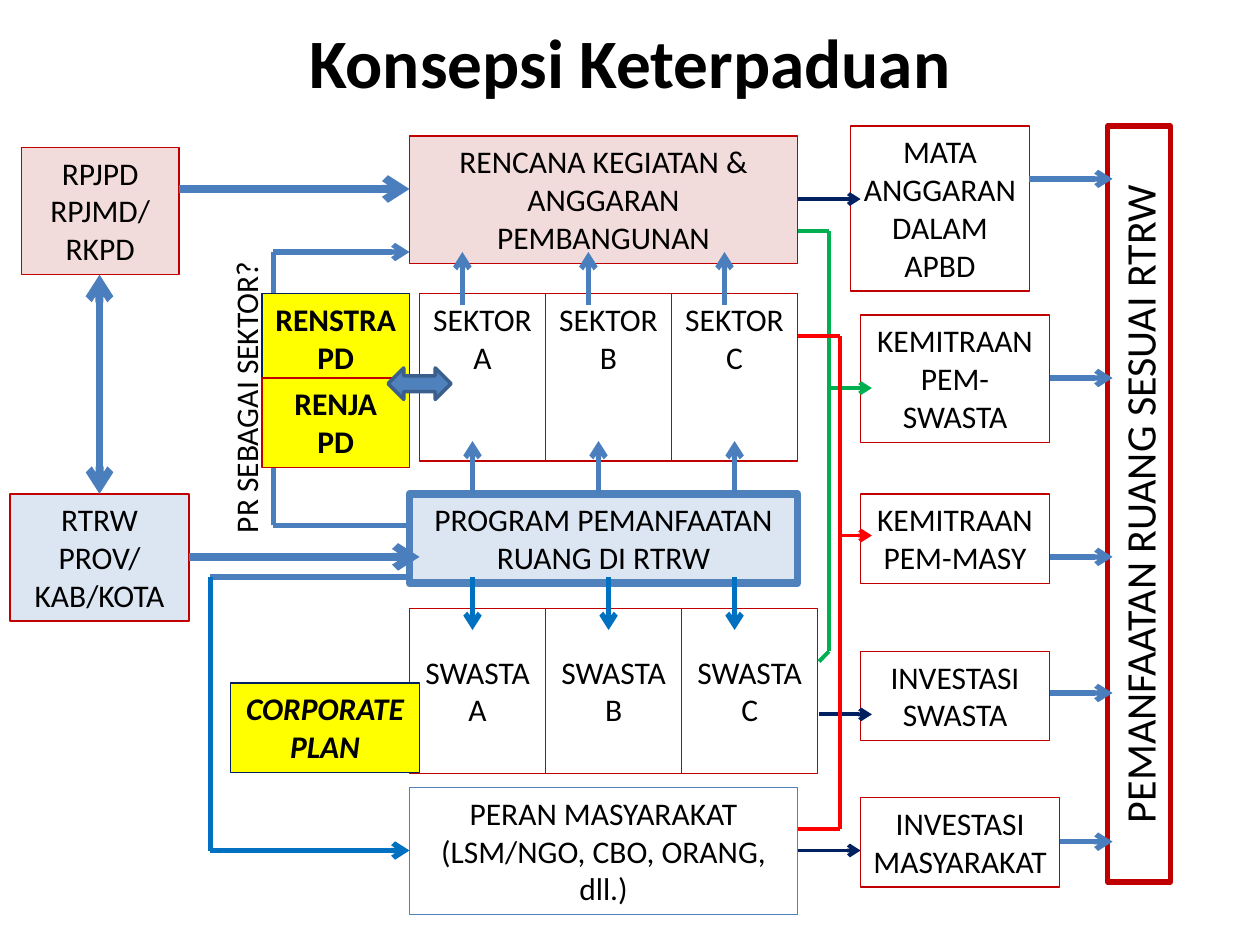
from itertools import pairwise

from lxml.etree import SubElement
from pptx import Presentation
from pptx.dml.color import RGBColor
from pptx.enum.shapes import MSO_CONNECTOR, MSO_SHAPE
from pptx.enum.text import MSO_ANCHOR, PP_ALIGN
from pptx.oxml.ns import qn
from pptx.util import Inches, Pt

COLORS = {
    "black": "000000", "blue": "4F81BD", "line": "4B7EBC", "edge": "3A5F8C",
    "sky": "DCE6F2", "pink": "F2DCDB", "yellow": "FFFF00", "maroon": "C00000",
    "navy": "002060", "azure": "0070C0", "green": "00B050", "red": "FF0000",
}
TWO, THREE, FOUR = 0.71, 1.01, 1.31  # box heights by number of text lines


def color(name):
    return RGBColor.from_string(COLORS[name])


def write(shape, text, size=18, bold=None, italic=None, align=PP_ALIGN.CENTER,
          anchor=MSO_ANCHOR.TOP, top=0.05):
    frame = shape.text_frame
    frame.word_wrap = True
    frame.vertical_anchor = anchor
    frame.margin_top = Inches(top)
    frame.text = text
    for par in frame.paragraphs:
        par.alignment = align
        font = par.font
        font.name, font.size = "Calibri", Pt(size)
        font.bold, font.italic = bold, italic
        font.color.rgb = color("black")


def label(slide, area, text, turn=0, **style):
    box = slide.shapes.add_textbox(*map(Inches, area))
    box.rotation = turn
    write(box, text, **style)


def block(slide, area, text="", fill=None, edge="maroon", width=0.75, turn=0,
          kind=MSO_SHAPE.RECTANGLE, **style):
    shape = slide.shapes.add_shape(kind, *map(Inches, area))
    shape.shadow.inherit = False
    shape.rotation = turn
    if fill:
        shape.fill.solid()
        shape.fill.fore_color.rgb = color(fill)
    else:
        shape.fill.background()
    shape.line.color.rgb = color(edge)
    shape.line.width = Pt(width)
    if text:
        write(shape, text, **style)


def route(slide, points, tint="line", width=3, head=False, tail=True):
    """Join the points with lines; the tail arrow sits at the last point."""
    legs = list(pairwise(points))
    for i, (start, end) in enumerate(legs):
        link = slide.shapes.add_connector(
            MSO_CONNECTOR.STRAIGHT, *map(Inches, start + end))
        link.line.color.rgb = color(tint)
        link.line.width = Pt(width)
        props = link.line._get_or_add_ln()
        if head and i == 0:
            SubElement(props, qn("a:headEnd"), type="arrow")
        if tail and i == len(legs) - 1:
            SubElement(props, qn("a:tailEnd"), type="arrow")
        SubElement(link._element.spPr, qn("a:effectLst"))


def plans(slide):
    # Loop from the programme to the budget, behind the yellow boxes
    route(slide, [(3.25, 4.17), (2.17, 4.17), (2.17, 2), (3.25, 2)])
    label(slide, (0.7, 2.88, 2.5, 0.4), "PR SEBAGAI SEKTOR?", turn=270,
          align=PP_ALIGN.LEFT)

    # Planning documents on the left
    block(slide, (0.17, 1.17, 1.25, THREE), "RPJPD RPJMD/\nRKPD", "pink")
    block(slide, (0.08, 3.92, 1.42, THREE), "RTRW PROV/\nKAB/KOTA", "sky")


def center(slide):
    block(slide, (3.25, 1.08, 3.08, THREE),
          "RENCANA KEGIATAN & ANGGARAN PEMBANGUNAN", "pink")
    block(slide, (3.25, 3.92, 3.08, TWO), "PROGRAM PEMANFAATAN RUANG DI RTRW",
          "sky", "blue", 4.5)
    block(slide, (3.25, 6.25, 3.08, THREE),
          "PERAN MASYARAKAT\n(LSM/NGO, CBO, ORANG, dll.)", edge="blue")

    # Sector and private columns
    for i, name in enumerate("ABC"):
        block(slide, (3.33 + i, 2.33, 1, 1.33), f"SEKTOR {name}")
        block(slide, (3.25 + 1.08 * i, 4.83, 1.08, FOUR), f"SWASTA {name}",
              top=0.35)

    # Yellow plan boxes
    block(slide, (2.08, 2.33, 1.17, TWO), "RENSTRA PD", "yellow", "navy",
          bold=True)
    block(slide, (2.08, 3, 1.17, TWO), "RENJA PD", "yellow", bold=True)
    block(slide, (1.83, 5.42, 1.5, TWO), "CORPORATE PLAN", "yellow", "navy",
          bold=True, italic=True)
    block(slide, (3.08, 2.92, 0.5, 0.25), fill="blue", edge="edge", width=2,
          kind=MSO_SHAPE.LEFT_RIGHT_ARROW)


def results(slide):
    # Funding channels, each with the height of its arrow to the goal
    channels = [
        ((6.75, 1, 1.42, FOUR), "MATA ANGGARAN DALAM APBD", 1.42),
        ((6.83, 2.5, 1.5, THREE), "KEMITRAAN PEM-SWASTA", 3),
        ((6.83, 3.92, 1.5, TWO), "KEMITRAAN PEM-MASY", 4.42),
        ((6.83, 5.17, 1.5, TWO), "INVESTASI SWASTA", 5.5),
        ((6.83, 6.33, 1.58, TWO), "INVESTASI MASYARAKAT", 6.68),
    ]
    block(slide, (6.04, 3.75, 6, 0.5), "PEMANFAATAN RUANG SESUAI RTRW",
          width=3, turn=270, size=24)
    for area, text, y in channels:
        block(slide, area, text)
        route(slide, [(area[0] + area[2], y), (8.83, y)])


def flows(slide):
    # Left side
    route(slide, [(0.79, 2.18), (0.79, 3.92)], width=4.5, head=True)
    route(slide, [(1.42, 1.5), (3.25, 1.5)], width=4.5)
    route(slide, [(1.5, 4.42), (3.33, 4.42)], width=4.5)
    route(slide, [(3.25, 4.58), (1.67, 4.58)], tail=False)
    route(slide, [(1.67, 4.58), (1.67, 6.75), (3.25, 6.75)], "azure")

    # Vertical arrows between the rows
    rows = [
        (2.42, 2, (3.67, 4.67, 5.75), "line"),
        (3.92, 3.5, (3.75, 4.75, 5.83), "line"),
        (4.58, 5, (3.75, 4.83, 5.83), "azure"),
    ]
    for start, end, columns, tint in rows:
        for x in columns:
            route(slide, [(x, start), (x, end)], tint)

    # Direct links to the channels
    for left, right, y in [(6.33, 6.83, 1.58), (6.5, 6.92, 5.67),
                           (6.33, 6.83, 6.75)]:
        route(slide, [(left, y), (right, y)], "navy", 2.25)

    # Shared links: a bracket and its branch
    route(slide, [(6.33, 1.83), (6.58, 1.83), (6.58, 5.17), (6.5, 5.25)],
          "green", 2.25, tail=False)
    route(slide, [(6.58, 3.08), (6.92, 3.08)], "green", 2.25)
    route(slide, [(6.33, 2.67), (6.67, 2.67), (6.67, 6.58), (6.33, 6.58)],
          "red", 2.25, tail=False)
    route(slide, [(6.67, 4.25), (6.92, 4.25)], "red", 2.25)


def main():
    deck = Presentation()
    deck.slide_width, deck.slide_height = Inches(10), Inches(7.5)
    slide = deck.slides.add_slide(deck.slide_layouts[6])
    label(slide, (0.5, 0.17, 9, 0.62), "Konsepsi Keterpaduan", size=39.6,
          bold=True, anchor=MSO_ANCHOR.MIDDLE)
    plans(slide)
    center(slide)
    results(slide)
    flows(slide)
    deck.save("out.pptx")


if __name__ == "__main__":
    main()
